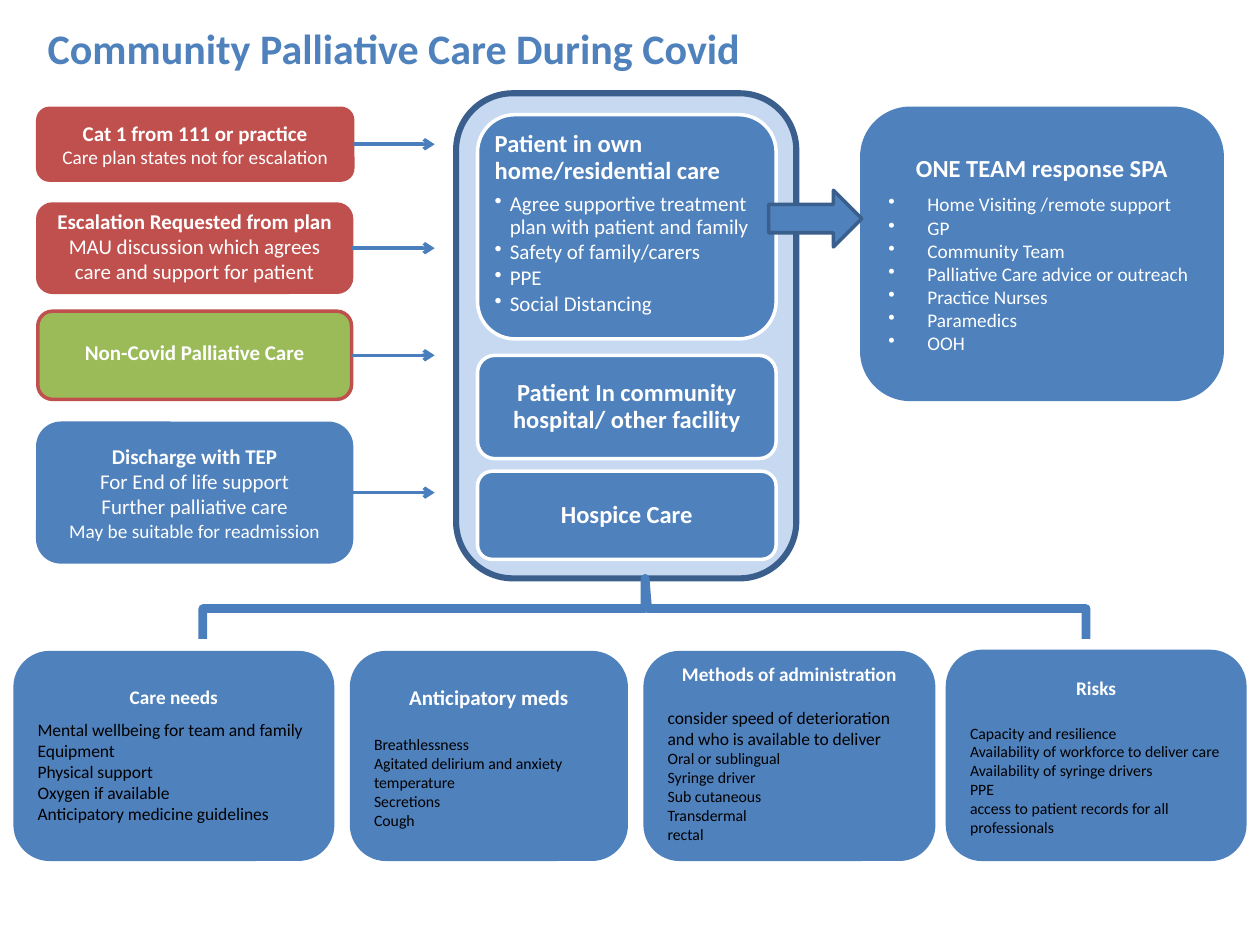
from dataclasses import dataclass

from lxml.etree import SubElement
from pptx import Presentation
from pptx.dml.color import RGBColor
from pptx.enum.shapes import MSO_CONNECTOR as Connector, MSO_SHAPE as Shape
from pptx.enum.text import MSO_ANCHOR as Anchor, PP_ALIGN as Align
from pptx.oxml.ns import qn
from pptx.util import Inches, Pt


@dataclass(frozen=True)
class Theme:
    font: str = "Calibri"
    blue: str = "4F81BD"
    stroke: str = "4B7EBC"
    navy: str = "3A5F8C"
    pale: str = "C6D9F1"
    red: str = "C0504D"
    green: str = "9BBB59"
    white: str = "FFFFFF"
    black: str = "000000"
    title: int = 24
    heading: int = 14
    body: int = 12
    label: int = 11
    detail: int = 10
    small: int = 9


THEME = Theme()


def color(value):
    return RGBColor.from_string(value)


def add_panel(page, frame, fill=THEME.blue, line=THEME.blue, kind=Shape.ROUNDED_RECTANGLE,
              width=2, top=None, margin=None):
    panel = page.shapes.add_shape(kind, *map(Inches, frame))
    panel.shadow.inherit = False
    panel.fill.solid()
    panel.fill.fore_color.rgb = color(fill)
    panel.line.color.rgb = color(line)
    panel.line.width = Pt(width)
    box = panel.text_frame
    box.word_wrap = True
    box.vertical_anchor = Anchor.MIDDLE if top is None else Anchor.TOP
    if margin is not None:
        box.margin_left = box.margin_right = Inches(margin)
        box.margin_top = box.margin_bottom = Inches(margin)
    if top is not None:
        box.margin_top = Inches(top)
    return panel


def add_text(box, text, size=THEME.body, bold=False, ink=THEME.white, align=Align.CENTER,
             before=None, after=None, leading=None, bullet=None):
    para = box.paragraphs[0]
    if para.runs:
        para = box.add_paragraph()
    if bullet:
        properties = para._p.get_or_add_pPr()
        properties.set("marL", str(Inches(bullet)))
        properties.set("indent", str(-Inches(bullet)))
        SubElement(properties, qn("a:buChar")).set("char", "•")
    para.alignment = align
    if before is not None:
        para.space_before = Pt(before)
    if after is not None:
        para.space_after = Pt(after)
    if leading is not None:
        para.line_spacing = leading
    span = para.add_run()
    span.text = text
    span.font.name = THEME.font
    span.font.size = Pt(size)
    span.font.bold = bold
    span.font.color.rgb = color(ink)


def add_arrow(page, card, end_x):
    middle = card.top + card.height // 2
    arrow = page.shapes.add_connector(
        Connector.STRAIGHT, card.left + card.width, middle, Inches(end_x), middle)
    arrow.begin_connect(card, 3)
    arrow.line.color.rgb = color(THEME.stroke)
    arrow.line.width = Pt(2)
    SubElement(arrow.line._get_or_add_ln(), qn("a:tailEnd")).set("type", "arrow")
    SubElement(arrow._element.spPr, qn("a:effectLst"))


def add_title(page):
    box = page.shapes.add_textbox(*map(Inches, (0.28, 0.13, 6.38, 0.5))).text_frame
    box.word_wrap = True
    add_text(box, "Community Palliative Care During Covid", size=THEME.title, bold=True,
             ink=THEME.blue, align=Align.LEFT)


def add_settings(page):
    kind = Shape.FLOWCHART_ALTERNATE_PROCESS
    add_panel(page, (3.62, 0.74, 2.7, 3.85), THEME.pale, THEME.navy, kind, width=3.5)
    home = add_panel(page, (3.79, 0.91, 2.37, 1.78), line=THEME.white, kind=kind,
                     top=0.05, margin=0.05).text_frame
    add_text(home, "Patient in own home/residential care", size=THEME.heading, bold=True,
             align=Align.LEFT, after=4.9, leading=0.9)
    for text in ("Agree supportive treatment plan with patient and family",
                 "Safety of family/carers", "PPE", "Social Distancing"):
        add_text(home, text, align=Align.LEFT, after=1.8, leading=0.9, bullet=0.12)
    for top, height, text in ((2.82, 0.82, "Patient In community hospital/ other facility"),
                              (3.74, 0.7, "Hospice Care")):
        panel = add_panel(page, (3.79, top, 2.37, height), line=THEME.white, kind=kind,
                          margin=0.06)
        add_text(panel.text_frame, text, size=THEME.heading, bold=True, leading=0.9)


def add_sources(page):
    body, label = THEME.body, THEME.label
    sources = (
        (0.86, 2.5, 0.57, THEME.red, THEME.red, None, "Cat 1 from 111 or practice",
         (("Care plan states not for escalation", label),)),
        (1.62, 2.49, 0.7, THEME.red, THEME.red, 0, "Escalation Requested from plan",
         (("MAU discussion which agrees care and support for patient", body),)),
        (2.47, 2.49, 0.7, THEME.green, THEME.red, 0.19, "Non-Covid Palliative Care", ()),
        (3.36, 2.49, 1.1, THEME.blue, THEME.blue, None, "Discharge with TEP",
         (("For End of life support", body), ("Further palliative care", body),
          ("May be suitable for readmission", label))),
    )
    for top, width, height, fill, line, inset, heading, details in sources:
        card = add_panel(page, (0.3, top, width, height), fill, line, top=inset)
        add_text(card.text_frame, heading, bold=True)
        for text, size in details:
            add_text(card.text_frame, text, size=size)
        add_arrow(page, card, 3.45)


def add_team(page):
    team = add_panel(page, (6.84, 0.86, 2.86, 2.31), top=0.24).text_frame
    add_text(team, "ONE TEAM response SPA", size=THEME.heading, bold=True, after=6)
    for text in ("Home Visiting /remote support", "GP", "Community Team",
                 "Palliative Care advice or outreach", "Practice Nurses", "Paramedics", "OOH"):
        add_text(team, text, size=THEME.label, align=Align.LEFT, bullet=0.31)
    add_panel(page, (6.1, 1.51, 0.74, 0.45), line=THEME.navy, kind=Shape.RIGHT_ARROW)


def add_bracket(page):
    points = [(Inches(x), Inches(y)) for x, y in (
        (1.61, 5.07), (1.61, 4.83), (5.12, 4.83), (5.12, 4.59),
        (5.14, 4.83), (8.62, 4.83), (8.62, 5.07))]
    builder = page.shapes.build_freeform(*points[0])
    builder.add_line_segments(points[1:], close=False)
    bracket = builder.convert_to_shape()
    bracket.shadow.inherit = False
    bracket.fill.background()
    bracket.line.color.rgb = color(THEME.stroke)
    bracket.line.width = Pt(5)


def add_topics(page):
    label, detail, small = THEME.label, THEME.detail, THEME.small
    topics = (
        ((0.12, 5.18, 2.52, 1.64), 0.18, "Care needs", label, 6, detail,
         ("Mental wellbeing for team and family", "Equipment", "Physical support",
          "Oxygen if available", "Anticipatory medicine guidelines")),
        ((2.79, 5.18, 2.18, 1.64), 0.17, "Anticipatory meds", THEME.body, 14.6, small,
         ("Breathlessness", "Agitated delirium and anxiety", "temperature", "Secretions",
          "Cough")),
        ((5.12, 5.18, 2.29, 1.64), 0, "Methods of administration", label, 12.2, detail,
         ("consider speed of deterioration and who is available to deliver",
          "Oral or sublingual", "Syringe driver", "Sub cutaneous", "Transdermal", "rectal")),
        ((7.52, 5.17, 2.36, 1.65), 0.12, "Risks", label, 13.4, small,
         ("Capacity and resilience", "Availability of workforce to deliver care",
          "Availability of syringe drivers", "PPE",
          "access to patient records for all professionals")),
    )
    for frame, inset, heading, size, gap, lead_size, details in topics:
        box = add_panel(page, frame, top=inset).text_frame
        add_text(box, heading, size=size, bold=True, after=gap)
        rest_size = detail if heading == "Care needs" else small
        for index, text in enumerate(details):
            add_text(box, text, size=rest_size if index else lead_size, ink=THEME.black,
                     align=Align.LEFT)


def main():
    deck = Presentation()
    deck.slide_width, deck.slide_height = Inches(10), Inches(7.5)
    page = deck.slides.add_slide(deck.slide_layouts[6])
    add_settings(page)
    add_title(page)
    add_sources(page)
    add_bracket(page)
    add_team(page)
    add_topics(page)
    deck.save("out.pptx")


if __name__ == "__main__":
    main()
